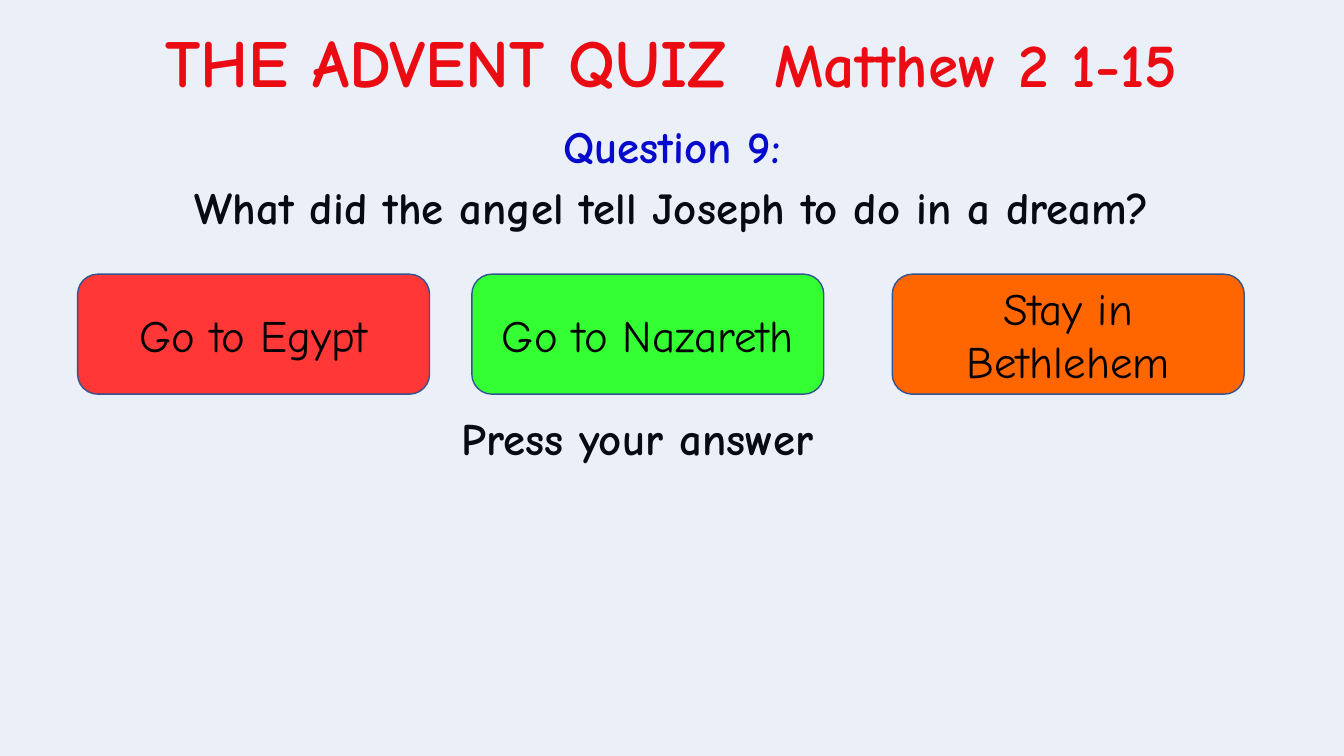
"""Build the Advent quiz slide with question 9 and its three answers."""
from dataclasses import dataclass

from lxml import etree
from pptx import Presentation
from pptx.dml.color import RGBColor
from pptx.enum.shapes import MSO_SHAPE as Shape
from pptx.enum.text import MSO_ANCHOR as Anchor, MSO_AUTO_SIZE as AutoSize, PP_ALIGN as Align
from pptx.oxml.ns import qn
from pptx.util import Inches, Pt


@dataclass(frozen=True)
class Theme:
    font: str = "Comic Neue"
    heading: str = "FF0000"
    number: str = "0000CC"
    ink: str = "000000"
    tint: str = "4472C4"
    border: str = "325491"
    heading_size: int = 48
    verse_size: int = 44
    body_size: int = 32


theme = Theme()


def add_run(paragraph, text, size, color, bold=True):
    run = paragraph.add_run()
    run.text = text
    run.font.name = theme.font
    run.font.size = Pt(size)
    run.font.bold = bold
    run.font.color.rgb = RGBColor.from_string(color)


def add_line(box, text, color, align):
    left, top, width, height = map(Inches, box)
    frame = slide.shapes.add_textbox(left, top, width, height).text_frame
    frame.word_wrap = True
    paragraph = frame.paragraphs[0]
    paragraph.alignment = align
    add_run(paragraph, text, theme.body_size, color)
    return paragraph


presentation = Presentation()
presentation.slide_width = Inches(13.33)
presentation.slide_height = Inches(7.5)
slide = presentation.slides.add_slide(presentation.slide_layouts[5])

heading = slide.shapes.title
heading.left, heading.top = Inches(0.37), Inches(0.15)
heading.width, heading.height = Inches(12.58), Inches(0.91)
heading.text_frame.word_wrap = False
heading.text_frame.auto_size = AutoSize.NONE
heading.text_frame.vertical_anchor = Anchor.TOP
heading_line = heading.text_frame.paragraphs[0]
heading_line.alignment = Align.CENTER
add_run(heading_line, "THE ADVENT QUIZ  ", theme.heading_size, theme.heading)
add_run(heading_line, "Matthew 2 1-15", theme.verse_size, theme.heading)

question = add_line((0.44, 1.77, 12.46, 1.19),
                    "What did the angel tell Joseph to do in a dream?", theme.ink, Align.CENTER)
question.line_spacing = Pt(36)
question.space_before = Pt(10)

prompt = add_line((4.48, 4.09, 6.73, 0.72), "Press your answer", theme.ink, Align.LEFT)
prompt.line_spacing = 0.9
prompt.space_before = Pt(7.5)

add_line((4.46, 1.13, 4.41, 0.64), "Question 9:", theme.number, Align.CENTER)

veil = slide.shapes.add_shape(Shape.RECTANGLE, 0, 0,
                              presentation.slide_width, presentation.slide_height)
veil.shadow.inherit = False
veil.fill.solid()
veil.fill.fore_color.rgb = RGBColor.from_string(theme.tint)
veil.line.fill.background()
veil_color = veil.fill._xPr.find(qn("a:solidFill"))[0]
etree.SubElement(veil_color, qn("a:alpha")).set("val", "10000")

answers = [
    (0.77, "FF3737", "Go to Egypt"),
    (4.68, "33FF33", "Go to Nazareth"),
    (8.85, "FF6600", "Stay in Bethlehem"),
]
for left, color, text in answers:
    answer = slide.shapes.add_shape(Shape.ROUNDED_RECTANGLE, Inches(left), Inches(2.72),
                                    Inches(3.49), Inches(1.19))
    answer.shadow.inherit = False
    answer.fill.solid()
    answer.fill.fore_color.rgb = RGBColor.from_string(color)
    answer.line.color.rgb = RGBColor.from_string(theme.border)
    answer.line.width = Pt(1)
    answer.text_frame.word_wrap = True
    answer.text_frame.vertical_anchor = Anchor.MIDDLE
    answer_line = answer.text_frame.paragraphs[0]
    answer_line.alignment = Align.CENTER
    add_run(answer_line, text, theme.body_size, theme.ink, bold=False)

presentation.save("out.pptx")
